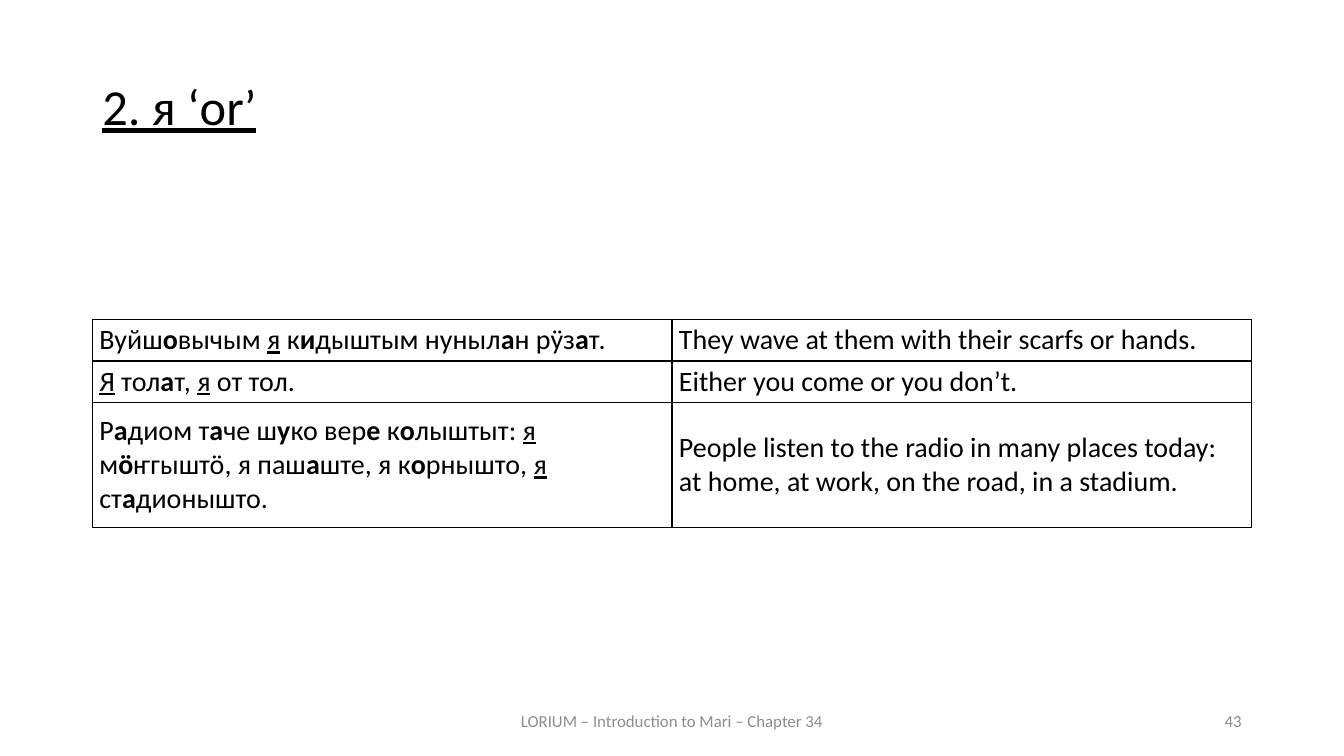
from dataclasses import dataclass

from lxml import etree
from pptx import Presentation
from pptx.dml.color import RGBColor
from pptx.enum import text as t
from pptx.oxml import ns
from pptx.util import Pt


@dataclass(frozen=True)
class Theme:
    font: str = "Calibri"
    ink: str = "000000"
    gray: str = "8C8C8C"
    title: int = 36
    body: int = 20
    small: int = 12
    rule: int = 1


THEME = Theme()
LEFT, WIDTH = 66, 828
ROWS = [
    (29.66, "Вуйш|*о|вычым |_я| к|*и|дыштым нуныл|*а|н рӱз|*а|т.",
     "They wave at them with their scarfs or hands."),
    (29.66, "_Я| тол|*а|т, |_я| от тол.",
     "Either you come or you don’t."),
    (89.2, "Р|*а|диом т|*а|че ш|*у|ко вер|*е| к|*о|лыштыт: |_я| м|*ӧ|ҥгыштӧ, я паш|*а|ште, "
     "я к|*о|рнышто, |_я| ст|*а|дионышто.",
     "People listen to the radio in many places today: "
     "at home, at work, on the road, in a stadium."),
]


def write(para, words, size, color):
    """Fill a paragraph from parts split by |, where * marks bold and _ underline."""
    for part in words.split("|"):
        run = para.add_run()
        run.text = part.lstrip("*_")
        font = run.font
        font.name, font.size = THEME.font, Pt(size)
        font.color.rgb = RGBColor.from_string(color)
        font.bold = part.startswith("*")
        font.underline = part.startswith("_")


def add_label(slide, box, words, size, color, align, anchor=t.MSO_ANCHOR.MIDDLE):
    frame = slide.shapes.add_textbox(*map(Pt, box)).text_frame
    frame.word_wrap = True
    frame.vertical_anchor = anchor
    para = frame.paragraphs[0]
    para.alignment = align
    write(para, words, size, color)
    return para


def add_edges(cell):
    props = cell._tc.get_or_add_tcPr()
    for spot, side in enumerate(("lnL", "lnR", "lnT", "lnB")):
        line = etree.Element(ns.qn("a:" + side), w=str(Pt(THEME.rule)))
        fill = etree.SubElement(line, ns.qn("a:solidFill"))
        etree.SubElement(fill, ns.qn("a:srgbClr"), val=THEME.ink)
        props.insert(spot, line)


def fill_cell(cell, words):
    cell.fill.background()
    cell.vertical_anchor = t.MSO_ANCHOR.MIDDLE
    cell.margin_left = cell.margin_right = Pt(5)
    cell.margin_top = cell.margin_bottom = 0
    write(cell.text_frame.paragraphs[0], words, THEME.body, THEME.ink)
    add_edges(cell)


def add_pairs(slide, top, rows):
    """Add a table of sentences, each beside its translation."""
    high = sum(row[0] for row in rows)
    table = slide.shapes.add_table(
        len(rows), 2, Pt(LEFT), Pt(top), Pt(WIDTH), Pt(high)).table
    table.first_row = table.horz_banding = False
    for row, (size, *pair) in zip(table.rows, rows):
        row.height = Pt(size)
        for cell, words in zip(row.cells, pair):
            fill_cell(cell, words)


def main():
    deck = Presentation()
    deck.slide_width, deck.slide_height = Pt(960), Pt(540)
    slide = deck.slides.add_slide(deck.slide_layouts[6])

    title = add_label(slide, (LEFT, 54.7, WIDTH, 60), "_2. я ‘or’", THEME.title,
                      THEME.ink, t.PP_ALIGN.JUSTIFY, t.MSO_ANCHOR.TOP)
    title.line_spacing = 0.9
    title.space_before = Pt(12)

    add_pairs(slide, 228.2, ROWS)
    add_label(slide, (318, 500.5, 324, 28.75), "LORIUM – Introduction to Mari – Chapter 34",
              THEME.small, THEME.gray, t.PP_ALIGN.CENTER)
    add_label(slide, (678, 500.5, 216, 28.75), "43",
              THEME.small, THEME.gray, t.PP_ALIGN.RIGHT)
    deck.save("out.pptx")


if __name__ == "__main__":
    main()
